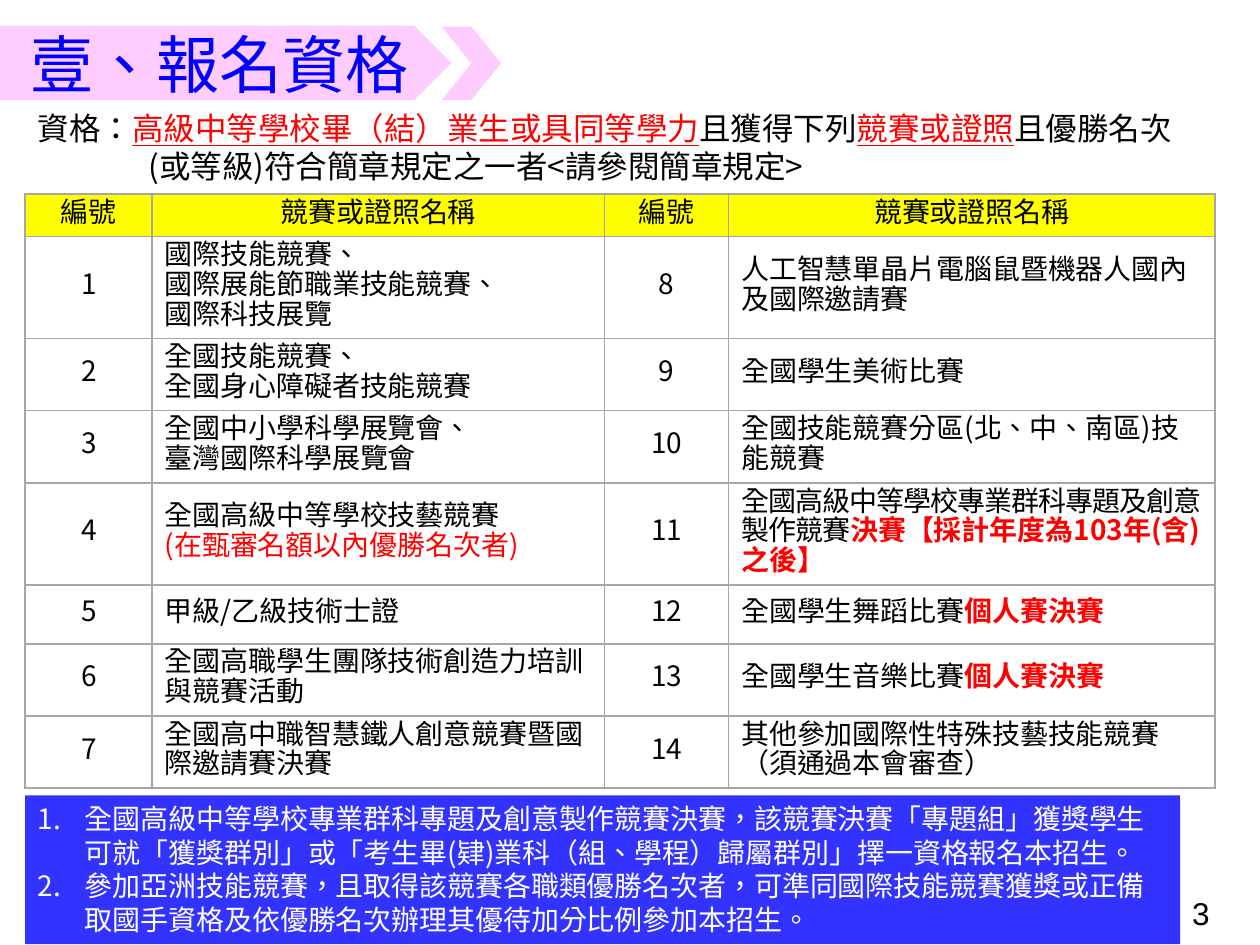
from lxml.etree import SubElement
from pptx import Presentation
from pptx.dml.color import RGBColor
from pptx.enum.shapes import MSO_SHAPE as Shape
from pptx.enum.text import MSO_ANCHOR as Anchor, MSO_AUTO_SIZE as AutoSize, PP_ALIGN as Align
from pptx.oxml.ns import qn
from pptx.util import Pt

BLACK = RGBColor(0x00, 0x00, 0x00)
WHITE = RGBColor(0xFF, 0xFF, 0xFF)
RED = RGBColor(0xFF, 0x00, 0x00)
BLUE = RGBColor(0x00, 0x00, 0xFF)
VIVID_BLUE = RGBColor(0x33, 0x33, 0xFF)
PINK = RGBColor(0xFF, 0xCC, 0xFF)
YELLOW = RGBColor(0xFF, 0xFF, 0x00)
GREY = RGBColor(0xA6, 0xA6, 0xA6)

RED_LINE = {"color": RED, "underline": True}
RED_BOLD = {"color": RED, "bold": True}

# A paragraph is a list of runs: (text, changes to the style).
QUALIFICATION = [
    ("資格：", {}),
    ("高級中等學校畢（結）業生或具同等學力", RED_LINE),
    ("且獲得下列", {}),
    ("競賽或證照", RED_LINE),
    ("且優勝名次(或等級)符合簡章規定之一者<請參閱簡章規定>", {}),
]
HEADINGS = ["編號", "競賽或證照名稱"] * 2
CONTESTS = [
    [[("國際技能競賽、", {})], [("國際展能節職業技能競賽、", {})], [("國際科技展覽", {})]],
    [[("全國技能競賽、", {})], [("全國身心障礙者技能競賽", {})]],
    [[("全國中小學科學展覽會、", {})], [("臺灣國際科學展覽會", {})]],
    [[("全國高級中等學校技藝競賽", {})], [("(在甄審名額以內優勝名次者)", {"color": RED})]],
    [[("甲級/乙級技術士證", {})]],
    [[("全國高職學生團隊技術創造力培訓與競賽活動", {})]],
    [[("全國高中職智慧鐵人創意競賽暨國際邀請賽決賽", {})]],
    [[("人工智慧單晶片電腦鼠暨機器人國內及國際邀請賽", {})]],
    [[("全國學生美術比賽", {})]],
    [[("全國技能競賽分區(北、中、南區)技能競賽", {})]],
    [[("全國高級中等學校專業群科專題及創意製作競賽", {"spacing": -0.5}),
      ("決賽【採計年度為103年(含)之後】", RED_BOLD)]],
    [[("全國學生舞蹈比賽", {}), ("個人賽決賽", RED_BOLD)]],
    [[("全國學生音樂比賽", {}), ("個人賽決賽", RED_BOLD)]],
    [[("其他參加國際性特殊技藝技能競賽", {})], [("（須通過本會審查）", {})]],
]
REMARKS = [
    "全國高級中等學校專業群科專題及創意製作競賽決賽，該競賽決賽「專題組」獲獎學生可就「獲獎群別」"
    "或「考生畢(肄)業科（組、學程）歸屬群別」擇一資格報名本招生。",
    "參加亞洲技能競賽，且取得該競賽各職類優勝名次者，可準同國際技能競賽獲獎或正備取國手資格"
    "及依優勝名次辦理其優待加分比例參加本招生。",
]
COLUMN_WIDTHS = [72.6, 258.4, 71, 278]
ROW_HEIGHTS = [24.3, 58.3, 41.1, 41.1, 58.3, 33.7, 41.1, 41.1]


class SlideBuilder:
    font = "Noto Sans CJK SC"
    body_size = 16
    line_pitch = 17

    def __init__(self, slide):
        self.slide = slide

    def add_run(self, paragraph, text, size=body_size, color=BLACK, bold=False,
                underline=False, spacing=0, font=font):
        run = paragraph.add_run()
        run.text = text
        run.font.size = Pt(size)
        run.font.name = font
        run.font.bold = bold
        run.font.underline = underline
        run.font.color.rgb = color
        properties = run.font._element
        properties.set("lang", "zh-TW")
        if spacing:
            properties.set("spc", str(int(spacing * 100)))
        SubElement(properties, qn("a:ea"), typeface=font)

    def fill_frame(self, frame, paragraphs, align=Align.LEFT, pitch=None, hanging=0,
                   numbered=False, **style):
        for index, runs in enumerate(paragraphs):
            paragraph = frame.add_paragraph() if index else frame.paragraphs[0]
            paragraph.alignment = align
            if pitch:
                paragraph.line_spacing = Pt(pitch)
            if hanging:
                properties = paragraph._p.get_or_add_pPr()
                properties.set("marL", str(Pt(hanging)))
                properties.set("indent", str(-Pt(hanging)))
                if numbered:
                    SubElement(properties, qn("a:buFont"), typeface="+mj-lt")
                    SubElement(properties, qn("a:buAutoNum"), type="arabicPeriod")
            for text, changes in runs:
                self.add_run(paragraph, text, **{**style, **changes})

    def arrows(self, *outlines):
        group = self.slide.shapes.add_group_shape()
        for kind, *box in outlines:
            self.panel(kind, box, PINK, group.shapes)

    def panel(self, kind, box, color, shapes=None):
        panel = (shapes or self.slide.shapes).add_shape(kind, *map(Pt, box))
        panel.shadow.inherit = False
        panel.fill.solid()
        panel.fill.fore_color.rgb = color
        panel.line.fill.background()
        return panel

    def title(self, text, box):
        title = self.slide.shapes.title
        title.left, title.top, title.width, title.height = map(Pt, box)
        frame = title.text_frame
        frame.auto_size = AutoSize.NONE
        frame.vertical_anchor = Anchor.BOTTOM
        frame.margin_left = frame.margin_right = frame.margin_bottom = 0
        frame.margin_top = Pt(3.6)
        self.fill_frame(frame, [[(text, {})]], size=36, color=BLUE)
        self.slide.shapes._spTree.append(title._element)  # in front of the arrows

    def text(self, paragraphs, box, **style):
        frame = self.slide.shapes.add_textbox(*map(Pt, box)).text_frame
        frame.word_wrap = True
        self.fill_frame(frame, paragraphs, **style)

    def remarks(self, remarks, box):
        frame = self.panel(Shape.RECTANGLE, box, VIVID_BLUE).text_frame
        frame.word_wrap = True
        frame.vertical_anchor = Anchor.TOP
        self.fill_frame(frame, [[(remark, {})] for remark in remarks], hanging=27,
                        numbered=True, color=WHITE)

    def cell(self, cell, paragraphs, fill, align):
        properties = cell._tc.get_or_add_tcPr()
        for side in ("lnL", "lnR", "lnT", "lnB"):
            border = SubElement(properties, qn(f"a:{side}"), w=str(Pt(1)))
            solid = SubElement(border, qn("a:solidFill"))
            SubElement(solid, qn("a:srgbClr"), val=str(GREY))
        cell.fill.solid()
        cell.fill.fore_color.rgb = fill
        cell.vertical_anchor = Anchor.MIDDLE
        self.fill_frame(cell.text_frame, paragraphs, align, self.line_pitch)

    def contest_table(self, left, top):
        table = self.slide.shapes.add_table(
            len(ROW_HEIGHTS), len(COLUMN_WIDTHS), Pt(left), Pt(top),
            Pt(sum(COLUMN_WIDTHS)), Pt(sum(ROW_HEIGHTS))).table
        table.first_row = table.horz_banding = False
        for column, width in zip(table.columns, COLUMN_WIDTHS):
            column.width = Pt(width)
        for row, height in zip(table.rows, ROW_HEIGHTS):
            row.height = Pt(height)
        for column, heading in enumerate(HEADINGS):
            self.cell(table.cell(0, column), [[(heading, {})]], YELLOW, Align.CENTER)
        for index, contest in enumerate(CONTESTS):
            half, row = divmod(index, len(ROW_HEIGHTS) - 1)
            number = [[(str(index + 1), {})]]
            self.cell(table.cell(row + 1, half * 2), number, WHITE, Align.CENTER)
            self.cell(table.cell(row + 1, half * 2 + 1), contest, WHITE, Align.LEFT)


def main():
    deck = Presentation()
    deck.slide_width, deck.slide_height = Pt(720), Pt(540)
    builder = SlideBuilder(deck.slides.add_slide(deck.slide_layouts[5]))
    builder.text([[("3", {})]], (643.7, 507.6, 85, 28.8), align=Align.CENTER,
                 size=18, font="Arial")
    builder.arrows((Shape.PENTAGON, 0, 14.6, 258, 42.6),
                   (Shape.CHEVRON, 252.3, 15.2, 34, 42))
    builder.title("壹、報名資格", (17.3, 15.1, 638, 42.5))
    builder.text([QUALIFICATION], (14.4, 59, 669.6, 46.8), hanging=63.4, size=18)
    builder.contest_table(14.4, 110.9)
    builder.remarks(REMARKS, (14.4, 454.5, 660, 85))
    deck.save("out.pptx")


if __name__ == "__main__":
    main()
